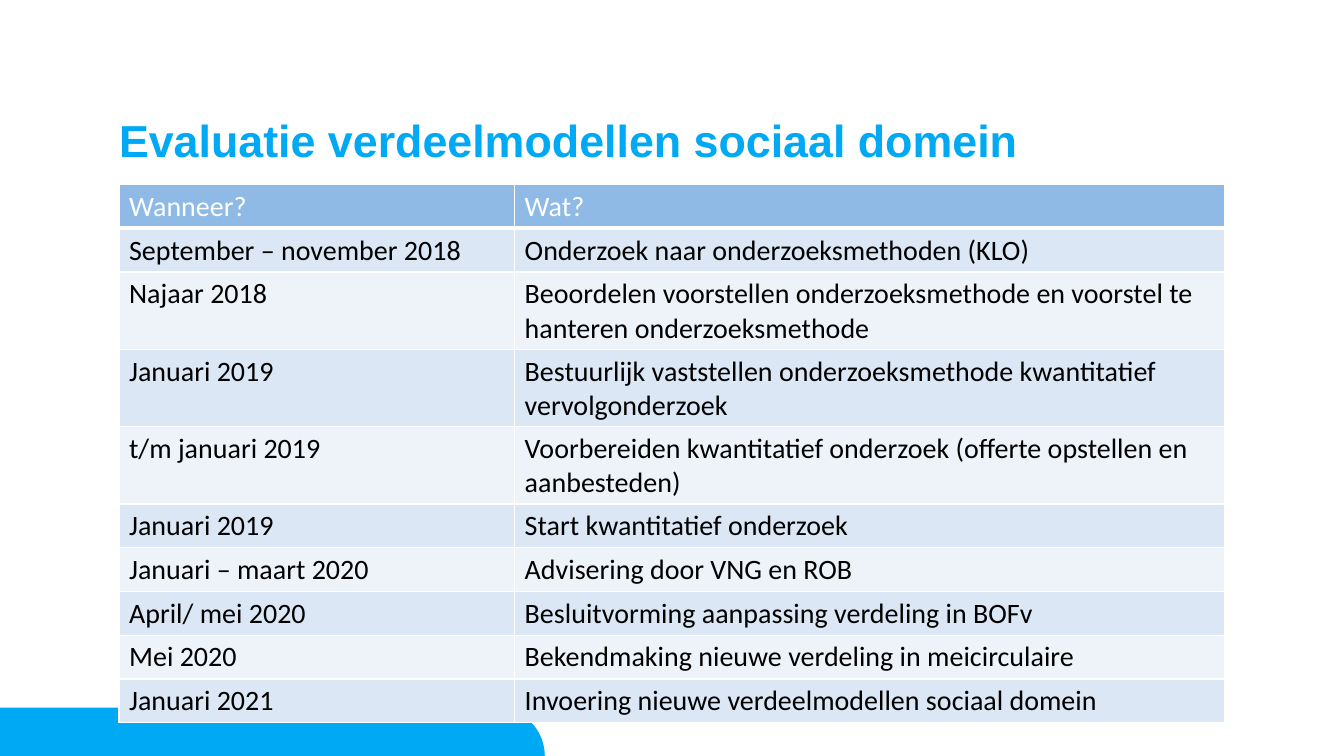
"""Build the slide on the evaluation of the social domain distribution models."""
import math

from lxml import etree
from pptx import Presentation
from pptx import util as u
from pptx.dml.color import RGBColor
from pptx.enum import text
from pptx.oxml.ns import qn

TITLE = "Evaluatie verdeelmodellen sociaal domein"
HEADER = ("Wanneer?", "Wat?")
PLANNING = [
    ("September – november 2018", "Onderzoek naar onderzoeksmethoden (KLO)"),
    ("Najaar 2018", "Beoordelen voorstellen onderzoeksmethode en voorstel te hanteren onderzoeksmethode"),
    ("Januari 2019", "Bestuurlijk vaststellen onderzoeksmethode kwantitatief vervolgonderzoek"),
    ("t/m januari 2019", "Voorbereiden kwantitatief onderzoek (offerte opstellen en aanbesteden)"),
    ("Januari 2019", "Start kwantitatief onderzoek"),
    ("Januari – maart 2020", "Advisering door VNG en ROB"),
    ("April/ mei 2020", "Besluitvorming aanpassing verdeling in BOFv"),
    ("Mei 2020", "Bekendmaking nieuwe verdeling in meicirculaire"),
    ("Januari 2021", "Invoering nieuwe verdeelmodellen sociaal domein"),
]
THEME = {
    "accent": "00A9F3", "header": "8EBAE5", "bands": ("DBE7F5", "EEF3FA"),
    "white": "FFFFFF", "ink": "000000",
    "title_font": "Arial", "body_font": "Calibri", "title_size": 32, "body_size": 20,
}
WIDTH, HEIGHT = u.Cm(33.87), u.Cm(19.05)
LEFT, TABLE_TOP = u.Cm(3), u.Cm(4.65)
COLUMNS = (u.Cm(9.97), u.Cm(17.9))
ROW_HEIGHT = u.Cm(1.04)
TAB_LEFTS, TAB_WIDTH, TAB_HEIGHT = (u.Cm(0), u.Cm(6.26)), u.Cm(7.47), u.Cm(1.22)


def set_font(p, name, size, color, bold=False):
    p.font.name, p.font.size, p.font.bold = name, u.Pt(size), bold
    p.font.color.rgb = RGBColor.from_string(color)


def add_tab(s, left):
    """Add a bottom tab whose upper right corner is a quarter circle."""
    centre = left + TAB_WIDTH - TAB_HEIGHT
    angles = [math.radians(a) for a in range(90, -1, -5)]
    arc = [(centre + TAB_HEIGHT * math.cos(a), HEIGHT - TAB_HEIGHT * math.sin(a)) for a in angles]
    fb = s.shapes.build_freeform(left, HEIGHT)
    fb.add_line_segments([(left, HEIGHT - TAB_HEIGHT)] + arc, close=True)
    sp = fb.convert_to_shape()
    sp.shadow.inherit = False
    sp.fill.solid()
    sp.fill.fore_color.rgb = RGBColor.from_string(THEME["accent"])
    sp.line.fill.background()


def add_title(s):
    sp = s.shapes.add_textbox(LEFT, u.Cm(3), sum(COLUMNS), u.Cm(2))
    tf = sp.text_frame
    tf.word_wrap = True
    tf.vertical_anchor = text.MSO_ANCHOR.TOP
    tf.margin_left = tf.margin_top = tf.margin_right = tf.margin_bottom = 0
    p = tf.paragraphs[0]
    p.text = TITLE
    p.line_spacing = 0.9
    set_font(p, THEME["title_font"], THEME["title_size"], THEME["accent"], True)


def set_borders(cell, bottom):
    tc_pr = cell._tc.get_or_add_tcPr()
    for side, width in (("L", 1), ("R", 1), ("T", 1), ("B", bottom)):
        ln = etree.SubElement(tc_pr, qn(f"a:ln{side}"), w=str(u.Pt(width)))
        fill = etree.SubElement(ln, qn("a:solidFill"))
        etree.SubElement(fill, qn("a:srgbClr"), val=THEME["white"])


def add_planning(s):
    rows = [HEADER] + PLANNING
    table = s.shapes.add_table(
        len(rows), len(COLUMNS), LEFT, TABLE_TOP, sum(COLUMNS), ROW_HEIGHT * len(rows)
    ).table
    for column, width in zip(table.columns, COLUMNS):
        column.width = width
    for i, row in enumerate(rows):
        table.rows[i].height = ROW_HEIGHT
        fill = THEME["bands"][(i - 1) % 2] if i else THEME["header"]
        for j, value in enumerate(row):
            cell = table.cell(i, j)
            set_borders(cell, 1 if i else 3)
            cell.fill.solid()
            cell.fill.fore_color.rgb = RGBColor.from_string(fill)
            p = cell.text_frame.paragraphs[0]
            p.text = value
            set_font(p, THEME["body_font"], THEME["body_size"], THEME["ink" if i else "white"])


def main():
    prs = Presentation()
    prs.slide_width, prs.slide_height = WIDTH, HEIGHT
    s = prs.slides.add_slide(prs.slide_layouts[6])
    for left in TAB_LEFTS:
        add_tab(s, left)
    add_title(s)
    add_planning(s)
    prs.save("out.pptx")


if __name__ == "__main__":
    main()
